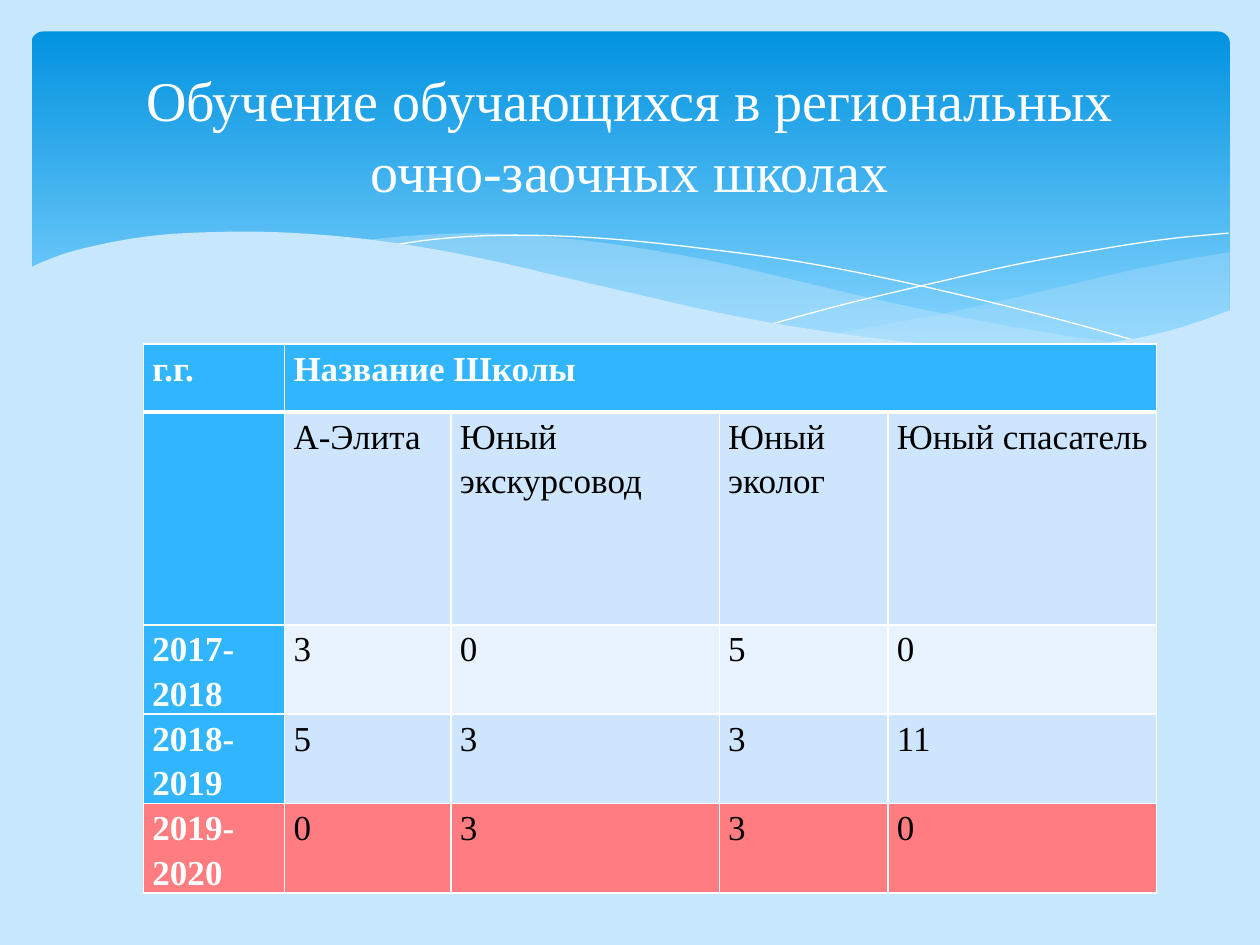
from dataclasses import dataclass
from typing import Optional

from lxml.etree import SubElement
from pptx import Presentation
from pptx.dml.color import RGBColor
from pptx.enum.shapes import MSO_SHAPE as Preset
from pptx.enum.text import MSO_ANCHOR as Anchor, PP_ALIGN as Align
from pptx.oxml.ns import qn
from pptx.util import Inches, Pt

PALE_BLUE = RGBColor(0xC6, 0xE7, 0xFC)
DEEP_BLUE = RGBColor(0x02, 0x93, 0xE0)
LIGHT_BLUE = RGBColor(0x83, 0xD3, 0xFE)
HEADER_BLUE = RGBColor(0x31, 0xB6, 0xFD)
BAND_DARK = RGBColor(0xCE, 0xE5, 0xFE)
BAND_LIGHT = RGBColor(0xE8, 0xF3, 0xFF)
CORAL = RGBColor(0xFF, 0x7C, 0x80)
WHITE = RGBColor(0xFF, 0xFF, 0xFF)
BLACK = RGBColor(0, 0, 0)
FONT = "Times New Roman"

GRID_COLUMNS, GRID_ROWS = 10, 7.5
CELL = Inches(1)
CURVE_STEPS = 6

Point = tuple[float, float]


@dataclass(frozen=True)
class Wave:
    curves: tuple[tuple[Point, ...], ...]
    fill: Optional[RGBColor] = None
    opacity: int = 100


WAVES = (
    Wave((((9.76, 2), (9.35, 2.07), (8.91, 2.16), (8.32, 2.3), (7.53, 2.48), (6.61, 2.65)),
          ((6.61, 2.65), (7.05, 2.71), (7.57, 2.76), (8.03, 2.78), (8.54, 2.76),
           (8.97, 2.7), (9.35, 2.62), (9.76, 2.47))), PALE_BLUE, 29),
    Wave((((8.93, 2.73), (8.37, 2.65), (7.75, 2.54), (7.06, 2.4), (6.29, 2.22),
           (5.69, 2.08), (5.14, 1.98), (4.65, 1.91), (4.2, 1.87), (3.8, 1.85),
           (3.28, 1.87), (2.86, 1.91)),
          ((2.86, 1.91), (3.42, 1.99), (4.04, 2.11), (4.49, 2.22), (5.3, 2.4),
           (6.01, 2.55), (6.65, 2.66), (7.22, 2.74), (7.73, 2.77), (8.18, 2.78),
           (8.57, 2.77), (8.93, 2.73))), PALE_BLUE, 40),
    Wave((((3.09, 1.95), (3.44, 1.9), (3.87, 1.87), (4.33, 1.87), (4.89, 1.9),
           (5.56, 1.97), (6.36, 2.08), (7.27, 2.26), (8.31, 2.51), (9.07, 2.72)),)),
    Wave((((6.13, 2.57), (6.72, 2.41), (7.48, 2.23), (8.06, 2.1), (8.66, 1.99),
           (9.24, 1.9), (9.75, 1.85)),)),
    Wave((((9.77, 2.46), (9.4, 2.59), (8.99, 2.69), (8.5, 2.75), (8.09, 2.77),
           (7.61, 2.75), (7.08, 2.7), (6.48, 2.62), (5.79, 2.5), (5.03, 2.33),
           (4.47, 2.2), (3.91, 2.07), (3.4, 1.97), (2.92, 1.9), (2.5, 1.86),
           (2.11, 1.84), (1.77, 1.84), (1.32, 1.86), (0.95, 1.91), (0.59, 1.99),
           (0.36, 2.07), (0.23, 2.13)),
          ((0.23, 3.29), (9.77, 3.29))), PALE_BLUE),
)

COLUMN_WIDTHS = (1.12, 1.32, 2.13, 1.34, 2.13)
ROW_HEIGHTS = (0.54, 1.69, 0.54, 0.54, 0.54)
ROW_FILLS = (HEADER_BLUE, BAND_DARK, BAND_LIGHT, BAND_DARK, CORAL)
TABLE_ROWS = (
    ("г.г.", "Название Школы", "", "", ""),
    ("", "А-Элита", "Юный экскурсовод", "Юный\nэколог", "Юный спасатель"),
    ("2017-2018", "3", "0", "5", "0"),
    ("2018-2019", "5", "3", "3", "11"),
    ("2019-2020", "0", "3", "3", "0"),
)


def grid(count: float) -> int:
    return round(count * CELL)


def write_text(frame, text: str, *, size: float, color: RGBColor, bold: bool = False,
               align: Align = Align.LEFT, spacing: float = 1) -> None:
    frame.word_wrap = True
    for index, line in enumerate(text.split("\n")):
        paragraph = frame.add_paragraph() if index else frame.paragraphs[0]
        paragraph.alignment = align
        paragraph.line_spacing = spacing
        run = paragraph.add_run()
        run.text = line
        run.font.name, run.font.size, run.font.bold = FONT, Pt(size), bold
        run.font.color.rgb = color


def smooth(anchors: tuple[Point, ...]) -> list[Point]:
    padded = (anchors[0], *anchors, anchors[-1])
    points = [anchors[0]]
    for before, start, end, after in zip(padded, padded[1:], padded[2:], padded[3:]):
        for step in range(1, CURVE_STEPS + 1):
            t = step / CURVE_STEPS
            points.append(tuple(
                b + (c - a) * t / 2 + (2 * a - 5 * b + 4 * c - d) * t ** 2 / 2
                + (3 * b - a - 3 * c + d) * t ** 3 / 2
                for a, b, c, d in zip(before, start, end, after)))
    return points


def draw_banner(slide) -> None:
    banner = slide.shapes.add_shape(
        Preset.ROUNDED_RECTANGLE, grid(0.25), grid(0.25), grid(9.51), grid(2.7))
    banner.adjustments[0] = 0.034
    banner.shadow.inherit = False
    banner.line.fill.background()
    banner.fill.gradient()
    banner.fill.gradient_angle = 270
    stops = zip(banner.fill.gradient_stops, (DEEP_BLUE, LIGHT_BLUE), (0, 0.9))
    for stop, color, position in stops:
        stop.color.rgb = color
        stop.position = position


def draw_wave(slide, wave: Wave) -> None:
    points = [(grid(x), grid(y)) for curve in wave.curves for x, y in smooth(curve)]
    builder = slide.shapes.build_freeform(*points[0])
    builder.add_line_segments(points[1:], close=wave.fill is not None)
    shape = builder.convert_to_shape()
    shape.shadow.inherit = False
    if wave.fill is None:
        shape.fill.background()
        shape.line.color.rgb = WHITE
        shape.line.width = Pt(0)
        return
    shape.line.fill.background()
    shape.fill.solid()
    shape.fill.fore_color.rgb = wave.fill
    if wave.opacity < 100:
        color = shape._element.spPr.find(qn("a:solidFill")).find(qn("a:srgbClr"))
        SubElement(color, qn("a:alpha"), val=str(wave.opacity * 1000))


def set_borders(cell, **widths: float) -> None:
    properties = cell._tc.get_or_add_tcPr()
    for side in "LRTB":
        line = SubElement(properties, qn(f"a:ln{side}"), w=str(Pt(widths.get(side, 1))))
        fill = SubElement(line, qn("a:solidFill"))
        SubElement(fill, qn("a:srgbClr"), val=str(WHITE))


def draw_table(slide) -> None:
    frame = slide.shapes.add_table(
        len(ROW_HEIGHTS), len(COLUMN_WIDTHS), grid(1.14), grid(2.73), grid(8.03), grid(4.53))
    table = frame.table
    for column, width in zip(table.columns, COLUMN_WIDTHS):
        column.width = grid(width)
    for row, height in zip(table.rows, ROW_HEIGHTS):
        row.height = grid(height)
    frame.height = grid(4.53)
    table.cell(0, 1).merge(table.cell(0, 4))
    for row, texts in enumerate(TABLE_ROWS):
        for column, text in enumerate(texts):
            cell = table.cell(row, column)
            header = row == 0 or column == 0
            cell.margin_left = cell.margin_right = grid(0.07)
            cell.margin_top = cell.margin_bottom = 0
            set_borders(cell, T=3 if row == 1 else 1, B=3 if row == 0 else 1)
            cell.fill.solid()
            banded = column == 0 and row < 4
            cell.fill.fore_color.rgb = HEADER_BLUE if banded else ROW_FILLS[row]
            if text:
                year = column == 0 and row > 0
                write_text(cell.text_frame, text, size=20, bold=header,
                           color=WHITE if header else BLACK, spacing=1.15,
                           align=Align.LEFT if year else Align.JUSTIFY)


def place_title(slide) -> None:
    title = slide.shapes.title
    title.left, title.top, title.width, title.height = map(grid, (0.5, 0.37, 9, 1.37))
    title.text_frame.vertical_anchor = Anchor.MIDDLE
    write_text(title.text_frame, "Обучение обучающихся в региональных очно-заочных школах",
               size=32, color=WHITE, align=Align.CENTER, spacing=1.05)
    slide.shapes._spTree.append(title._element)


def main() -> None:
    presentation = Presentation()
    presentation.slide_width = grid(GRID_COLUMNS)
    presentation.slide_height = grid(GRID_ROWS)
    slide = presentation.slides.add_slide(presentation.slide_layouts[5])
    slide.background.fill.solid()
    slide.background.fill.fore_color.rgb = PALE_BLUE
    draw_banner(slide)
    for wave in WAVES:
        draw_wave(slide, wave)
    draw_table(slide)
    place_title(slide)
    presentation.save("out.pptx")


if __name__ == "__main__":
    main()
